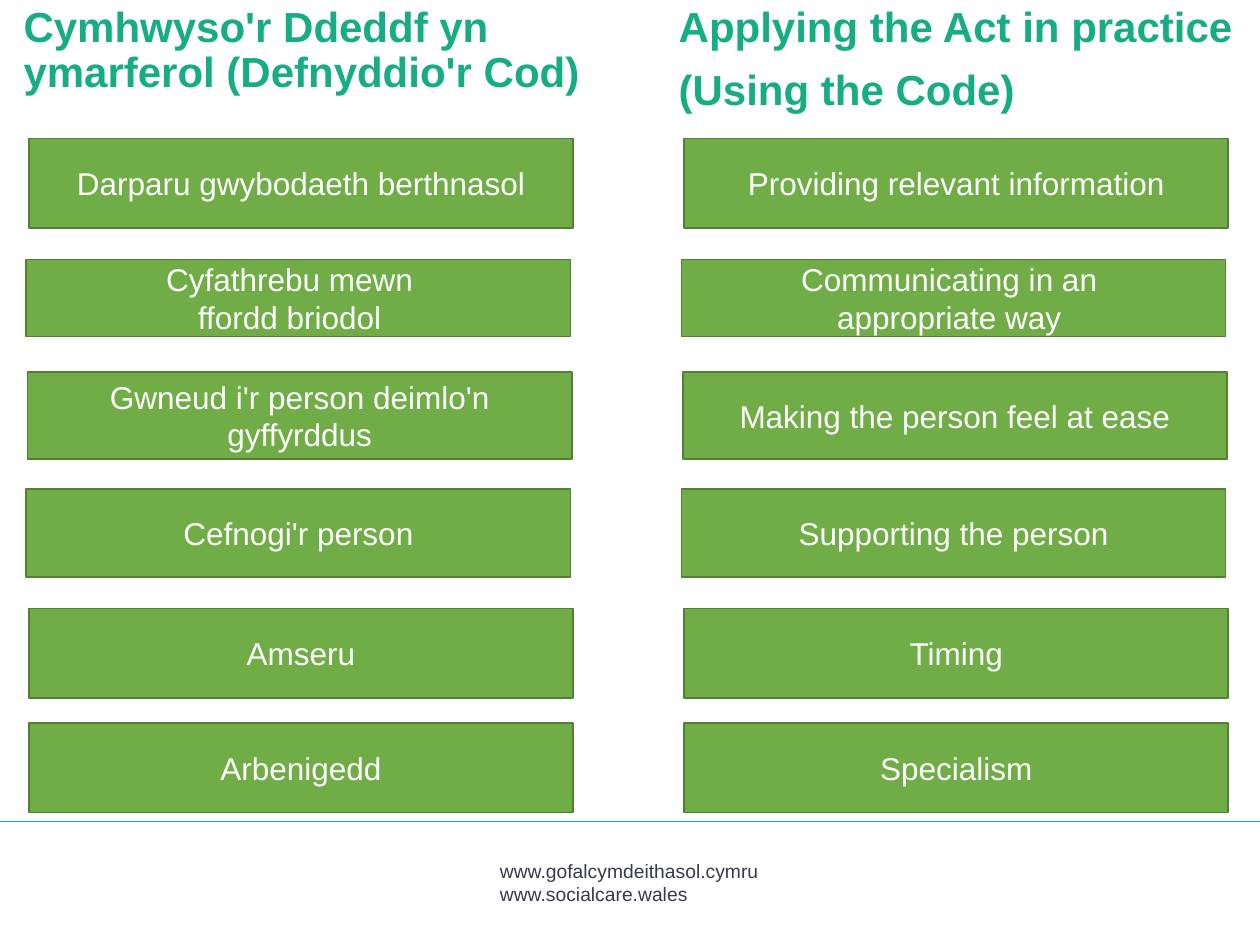
from dataclasses import dataclass
from typing import Any

from lxml.etree import SubElement
from pptx import Presentation
from pptx.dml.color import RGBColor
from pptx.enum.shapes import MSO_CONNECTOR, MSO_SHAPE
from pptx.enum.text import MSO_ANCHOR, PP_ALIGN
from pptx.oxml.ns import qn
from pptx.util import Pt


@dataclass(frozen=True)
class Theme:
    teal: RGBColor = RGBColor(0x16, 0xAD, 0x85)
    green: RGBColor = RGBColor(0x70, 0xAD, 0x47)
    dark_green: RGBColor = RGBColor(0x53, 0x80, 0x35)
    slate: RGBColor = RGBColor(0x37, 0x39, 0x4C)
    white: RGBColor = RGBColor(0xFF, 0xFF, 0xFF)
    font: str = "Arial"
    heading_size: float = 24
    step_size: float = 18
    footer_size: float = 11


@dataclass(frozen=True)
class Row:
    indent: float
    top: float
    height: float


@dataclass(frozen=True)
class Column:
    left: float
    heading: list[str]
    steps: list[list[str]]
    split_inset: float  # right inset of the first line in a two-line step


THEME = Theme()
SLIDE_WIDTH, SLIDE_HEIGHT = 720, 540
STEP_WIDTH = 311
HEADING_OUTDENT, HEADING_WIDTH, HEADING_HEIGHT = 8.64, 337.7, 467.3
RULE_TOP = 469.4

ROWS = [
    Row(1.5, 79.2, 51),
    Row(0, 148.3, 44),
    Row(0.75, 212.4, 50),
    Row(0, 279.4, 50.4),
    Row(1.5, 347.7, 51),
    Row(1.5, 413.3, 51),
]

COLUMNS = [
    Column(
        15,
        ["Cymhwyso'r Ddeddf yn ymarferol (Defnyddio'r Cod)"],
        [
            ["Darparu gwybodaeth berthnasol"],
            ["Cyfathrebu mewn", "ffordd briodol"],
            ["Gwneud i'r person deimlo'n gyffyrddus"],
            ["Cefnogi'r person"],
            ["Amseru"],
            ["Arbenigedd"],
        ],
        10,
    ),
    Column(
        389.4,
        ["Applying the Act in practice", "(Using the Code)"],
        [
            ["Providing relevant information"],
            ["Communicating in an", "appropriate way"],
            ["Making the person feel at ease"],
            ["Supporting the person"],
            ["Timing"],
            ["Specialism"],
        ],
        5,
    ),
]


def apply_format(target: Any, values: dict[str, Any]) -> None:
    for name, value in values.items():
        setattr(target, name, value)


def write_lines(frame: Any, lines: list[str], size: float, color: RGBColor,
                bold: bool = False, **paragraph_format: Any) -> None:
    frame.word_wrap = True
    for index, line in enumerate(lines):
        paragraph = frame.paragraphs[0] if index == 0 else frame.add_paragraph()
        apply_format(paragraph, paragraph_format)
        if index == 0:
            paragraph.space_before = Pt(0)
        run = paragraph.add_run()
        run.text = line
        apply_format(run.font, {"name": THEME.font, "size": Pt(size), "bold": bold})
        run.font.color.rgb = color


def add_heading(slide: Any, column: Column) -> None:
    box = slide.shapes.add_textbox(Pt(column.left - HEADING_OUTDENT), Pt(0),
                                   Pt(HEADING_WIDTH), Pt(HEADING_HEIGHT))
    write_lines(box.text_frame, column.heading, THEME.heading_size, THEME.teal,
                bold=True, line_spacing=0.9, space_before=Pt(10))


def add_step(slide: Any, column: Column, row: Row, lines: list[str]) -> None:
    step = slide.shapes.add_shape(MSO_SHAPE.RECTANGLE, Pt(column.left + row.indent),
                                  Pt(row.top), Pt(STEP_WIDTH), Pt(row.height))
    step.shadow.inherit = False
    step.fill.solid()
    step.fill.fore_color.rgb = THEME.green
    step.line.color.rgb = THEME.dark_green
    step.line.width = Pt(1)
    frame = step.text_frame
    frame.vertical_anchor = MSO_ANCHOR.MIDDLE
    write_lines(frame, lines, THEME.step_size, THEME.white, alignment=PP_ALIGN.CENTER)
    if len(lines) > 1:
        properties = frame.paragraphs[0]._p.get_or_add_pPr()
        properties.set("marR", str(int(Pt(column.split_inset))))


def add_footer(slide: Any) -> None:
    rule = slide.shapes.add_connector(MSO_CONNECTOR.STRAIGHT, Pt(0), Pt(RULE_TOP),
                                      Pt(SLIDE_WIDTH), Pt(RULE_TOP))
    rule.line.color.rgb = THEME.teal
    rule.line.width = Pt(1)
    SubElement(rule._element.spPr, qn("a:effectLst"))
    addresses = slide.shapes.add_textbox(Pt(278.6), Pt(487.4), Pt(163), Pt(33))
    write_lines(addresses.text_frame,
                ["www.gofalcymdeithasol.cymru", "www.socialcare.wales"],
                THEME.footer_size, THEME.slate)


def main() -> None:
    presentation = Presentation()
    apply_format(presentation, {"slide_width": Pt(SLIDE_WIDTH),
                                "slide_height": Pt(SLIDE_HEIGHT)})
    slide = presentation.slides.add_slide(presentation.slide_layouts[6])

    # Rule and web addresses
    add_footer(slide)

    # English and Welsh columns
    for column in reversed(COLUMNS):
        add_heading(slide, column)
        for row, lines in zip(ROWS, column.steps):
            add_step(slide, column, row, lines)

    presentation.save("out.pptx")


if __name__ == "__main__":
    main()
